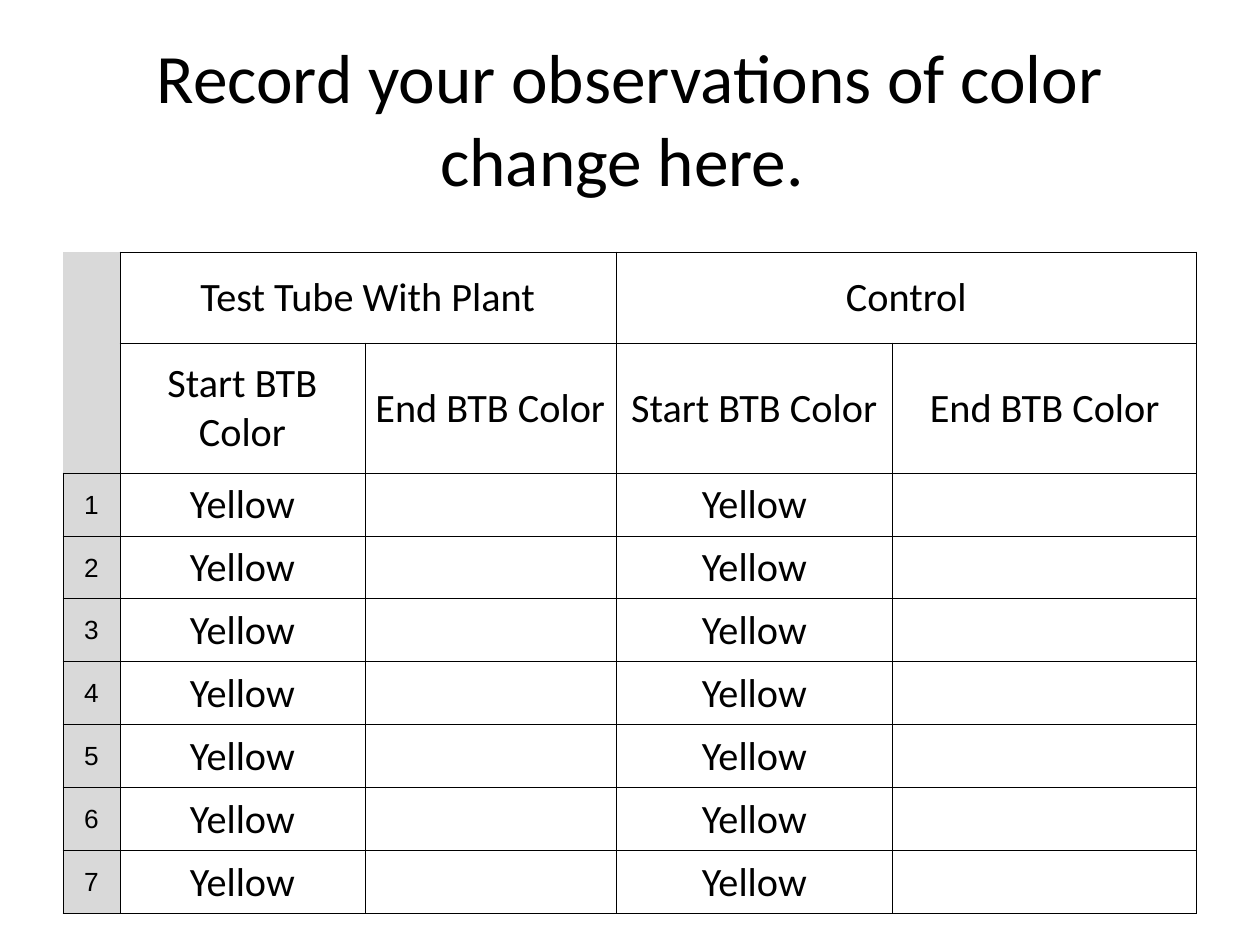
from dataclasses import dataclass

from lxml import etree
from pptx import Presentation
from pptx import util as u
from pptx.dml.color import RGBColor
from pptx.enum import text as t
from pptx.oxml import ns

PX = 914400 // 126  # EMU in one px, at 126 px to the inch
COLORS = {"ink": "000000", "paper": "FFFFFF", "label": "D9D9D9"}
COLUMN_WIDTHS = [57, 245, 251, 277, 304]
ROW_HEIGHTS = [91, 130] + [63] * 7
TRIALS = 7
START_COLOR = "Yellow"


@dataclass
class CellStyle:
    fill: str = "paper"
    font: str = "Calibri"
    size: float = 23
    edges: str = "LRTB"


BODY = CellStyle()
NUMBER = CellStyle(fill="label", font="Arial", size=15)
CORNERS = [CellStyle(fill="label", edges="R"), CellStyle(fill="label", edges="RB")]


def px(length: int) -> int:
    return u.Emu(length * PX)


def rgb(name: str) -> RGBColor:
    return RGBColor.from_string(COLORS[name])


def write(frame, text: str, *, font: str, size: float, color: str = "ink") -> None:
    """Fill a text frame with one centred paragraph."""
    para = frame.paragraphs[0]
    para.alignment = t.PP_ALIGN.CENTER
    span = para.add_run()
    span.text = text
    span.font.name = font
    span.font.size = u.Pt(size)
    span.font.color.rgb = rgb(color)


def draw_borders(cell, edges: str) -> None:
    """Rule the named edges in half-point lines and leave the others clear."""
    properties = cell._tc.get_or_add_tcPr()
    for edge in "LRTB":
        line = etree.SubElement(properties, ns.qn(f"a:ln{edge}"), w=str(u.Pt(0.5)))
        if edge in edges:
            solid = etree.SubElement(line, ns.qn("a:solidFill"))
            etree.SubElement(solid, ns.qn("a:srgbClr"), val=COLORS["ink"])
        else:
            etree.SubElement(line, ns.qn("a:noFill"))


def format_cell(cell, text: str, style: CellStyle) -> None:
    cell.margin_left = cell.margin_right = cell.margin_top = px(1)
    cell.margin_bottom = 0
    cell.vertical_anchor = t.MSO_ANCHOR.MIDDLE
    draw_borders(cell, style.edges)
    cell.fill.solid()
    cell.fill.fore_color.rgb = rgb(style.fill)
    if text:
        write(cell.text_frame, text, font=style.font, size=style.size)


def add_title(page) -> None:
    box = page.shapes.title
    box.left, box.top, box.width, box.height = px(63), px(38), px(1134), px(158)
    frame = box.text_frame
    frame.word_wrap = True
    frame.auto_size = t.MSO_AUTO_SIZE.NONE
    frame.vertical_anchor = t.MSO_ANCHOR.MIDDLE
    write(frame, "Record your observations of color change here. ",
          font="Calibri", size=39.6)


def add_observations(page) -> None:
    rows = [
        ["", "Test Tube With Plant", "", "Control", ""],
        [""] + ["Start BTB Color", "End BTB Color"] * 2,
    ]
    rows += [[str(trial), START_COLOR, "", START_COLOR, ""]
             for trial in range(1, TRIALS + 1)]

    table = page.shapes.add_table(
        len(rows), len(COLUMN_WIDTHS), px(63), px(252),
        px(sum(COLUMN_WIDTHS)), px(sum(ROW_HEIGHTS))).table
    table.first_row = table.horz_banding = False
    for column, width in zip(table.columns, COLUMN_WIDTHS):
        column.width = px(width)
    for row, height in zip(table.rows, ROW_HEIGHTS):
        row.height = px(height)

    # Group headings span a start and an end column
    for left in (1, 3):
        table.cell(0, left).merge(table.cell(0, left + 1))

    for r, texts in enumerate(rows):
        label_style = CORNERS[r] if r < len(CORNERS) else NUMBER
        for c, text in enumerate(texts):
            format_cell(table.cell(r, c), text, BODY if c else label_style)


def main() -> None:
    deck = Presentation()
    deck.slide_width, deck.slide_height = u.Inches(10), u.Inches(7.5)
    page = deck.slides.add_slide(deck.slide_layouts[5])  # title only
    add_title(page)
    add_observations(page)
    deck.save("out.pptx")


if __name__ == "__main__":
    main()
